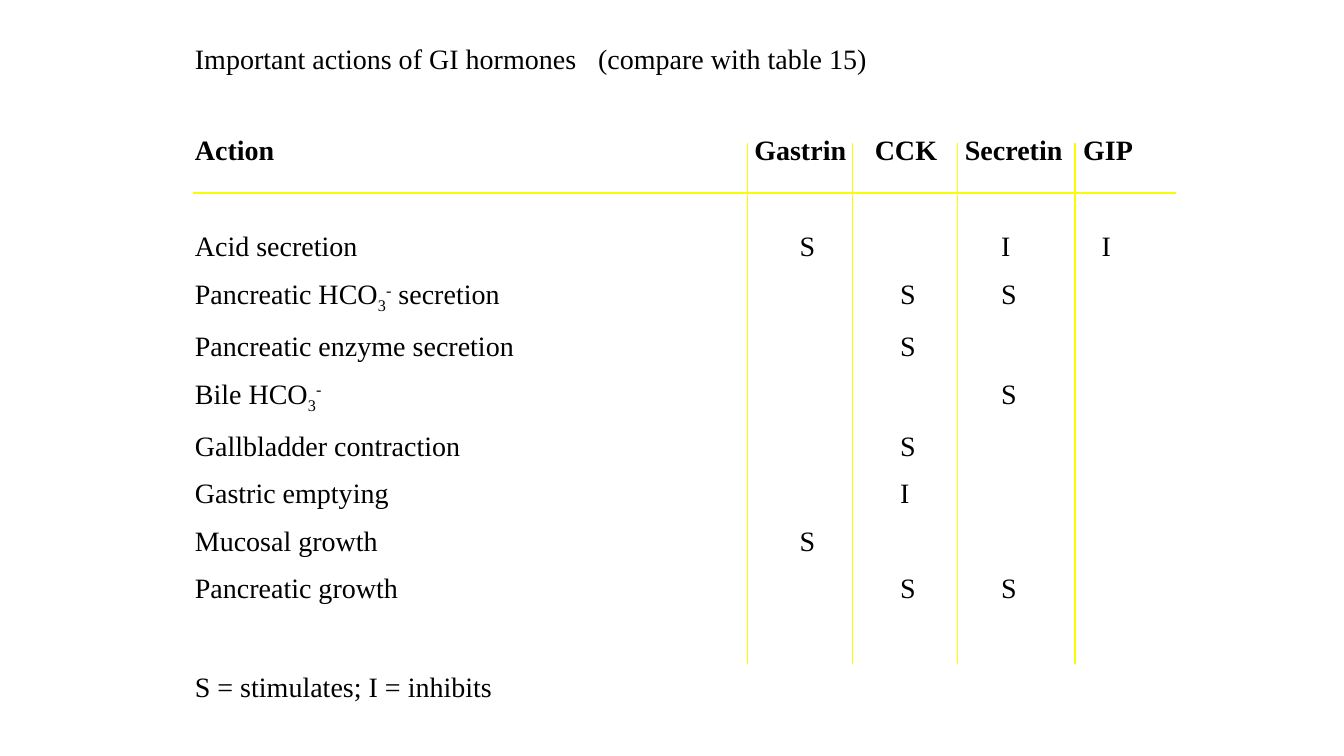
from dataclasses import dataclass

from lxml.etree import SubElement
from pptx import Presentation
from pptx.dml.color import RGBColor
from pptx.enum.shapes import MSO_CONNECTOR
from pptx.enum.text import MSO_ANCHOR, MSO_AUTO_SIZE, PP_ALIGN
from pptx.oxml.ns import qn
from pptx.util import Pt

COLOURS = {"paper": "FFFFFF", "text": "000000", "rule": "FAFD00"}
FONT = "Times New Roman"
TABLE_LEFT, TABLE_TOP = 138, 97
TEXT_INDENT = 1.2
HEADER_HEIGHT = 68.6
ROW_HEIGHT, FORMULA_ROW_HEIGHT = 34, 37.2
RULE_TOP, RULE_BOTTOM, HEADER_RULE_Y = 102, 474, 138
BICARBONATE = (("HCO", 0), ("3", -25), ("-", 30))


@dataclass(frozen=True)
class Column:
    heading: str
    width: float
    heading_indent: float
    mark_indent: float


@dataclass(frozen=True)
class Action:
    label: tuple[tuple[str, int], ...]
    marks: tuple[str, str, str, str]

    @property
    def height(self) -> float:
        return FORMULA_ROW_HEIGHT if len(self.label) > 1 else ROW_HEIGHT


@dataclass(frozen=True)
class Rule:
    start: tuple[float, float]
    end: tuple[float, float]


COLUMNS = (
    Column("Action", 396, TEXT_INDENT, TEXT_INDENT),
    Column("Gastrin", 75, 4.8, 37.2),
    Column("CCK", 75, 15.9, 34.1),
    Column("Secretin", 84, 5.3, 31.2),
    Column("GIP", 72, 5.8, 19),
)
ACTIONS = (
    Action((("Acid secretion", 0),), ("S", "", "I", "I")),
    Action((("Pancreatic ", 0), *BICARBONATE, (" secretion", 0)), ("", "S", "S", "")),
    Action((("Pancreatic enzyme secretion", 0),), ("", "S", "", "")),
    Action((("Bile ", 0), *BICARBONATE), ("", "", "S", "")),
    Action((("Gallbladder contraction", 0),), ("", "S", "", "")),
    Action((("Gastric emptying", 0),), ("", "I", "", "")),
    Action((("Mucosal growth", 0),), ("S", "", "", "")),
    Action((("Pancreatic growth", 0),), ("", "S", "S", "")),
)


def write(paragraph, text: str, *, bold: bool = False, baseline: int = 0) -> None:
    """Append a run; baseline is the raising or lowering in percent."""
    run = paragraph.add_run()
    run.text = text
    run.font.name = FONT
    run.font.size = Pt(20)
    run.font.bold = bold
    run.font.color.rgb = RGBColor.from_string(COLOURS["text"])
    if baseline:
        run._r.get_or_add_rPr().set("baseline", str(baseline * 1000))


def fill_placeholder(shape, text: str, top: float, tab: float | None = None) -> None:
    """Place one plain line of text, with an optional tab stop."""
    shape.left, shape.top = Pt(TABLE_LEFT), Pt(top)
    shape.width, shape.height = Pt(702), Pt(26)
    frame = shape.text_frame
    frame.auto_size = MSO_AUTO_SIZE.NONE
    frame.word_wrap = True
    frame.vertical_anchor = MSO_ANCHOR.TOP
    frame.margin_left = Pt(TEXT_INDENT)
    frame.margin_right = frame.margin_top = frame.margin_bottom = 0
    paragraph = frame.paragraphs[0]
    paragraph.alignment = PP_ALIGN.LEFT
    paragraph.space_before = Pt(0)
    properties = paragraph._p.get_or_add_pPr()
    properties.set("marL", "0")
    properties.set("indent", "0")
    SubElement(properties, qn("a:buNone"))
    if tab is not None:
        stops = SubElement(properties, qn("a:tabLst"))
        SubElement(stops, qn("a:tab"), pos=str(Pt(tab)), algn="l")
    write(paragraph, text)


def fill_cell(cell, runs: tuple[tuple[str, int], ...], indent: float, bold: bool = False) -> None:
    cell.fill.background()
    cell.vertical_anchor = MSO_ANCHOR.TOP
    cell.margin_left = Pt(indent)
    cell.margin_right = cell.margin_top = cell.margin_bottom = 0
    for text, baseline in runs:
        if text:
            write(cell.text_frame.paragraphs[0], text, bold=bold, baseline=baseline)


def add_hormone_table(slide) -> None:
    width = sum(column.width for column in COLUMNS)
    height = HEADER_HEIGHT + sum(action.height for action in ACTIONS)
    table = slide.shapes.add_table(
        len(ACTIONS) + 1, len(COLUMNS),
        Pt(TABLE_LEFT), Pt(TABLE_TOP), Pt(width), Pt(height),
    ).table
    table.first_row = table.horz_banding = False
    table.rows[0].height = Pt(HEADER_HEIGHT)
    for index, column in enumerate(COLUMNS):
        table.columns[index].width = Pt(column.width)
        fill_cell(table.cell(0, index), ((column.heading, 0),), column.heading_indent, bold=True)
    for row, action in enumerate(ACTIONS, start=1):
        table.rows[row].height = Pt(action.height)
        contents = (action.label, *(((mark, 0),) for mark in action.marks))
        for index, (column, runs) in enumerate(zip(COLUMNS, contents)):
            fill_cell(table.cell(row, index), runs, column.mark_indent)


def table_rules() -> list[Rule]:
    """One rule under the headings and one between each pair of columns."""
    right = TABLE_LEFT + sum(column.width for column in COLUMNS)
    rules = [Rule((TABLE_LEFT, HEADER_RULE_Y), (right, HEADER_RULE_Y))]
    x = TABLE_LEFT
    for column in COLUMNS[:-1]:
        x += column.width
        rules.append(Rule((x, RULE_TOP), (x, RULE_BOTTOM)))
    return rules


def draw_rule(slide, rule: Rule) -> None:
    ends = [Pt(length) for length in (*rule.start, *rule.end)]
    connector = slide.shapes.add_connector(MSO_CONNECTOR.STRAIGHT, *ends)
    connector.line.color.rgb = RGBColor.from_string(COLOURS["rule"])
    connector.line.width = Pt(1)
    SubElement(connector._element.spPr, qn("a:effectLst"))


def main() -> None:
    presentation = Presentation()
    presentation.slide_width, presentation.slide_height = Pt(960), Pt(540)
    slide = presentation.slides.add_slide(presentation.slide_layouts[1])
    background = slide.background.fill
    background.solid()
    background.fore_color.rgb = RGBColor.from_string(COLOURS["paper"])
    title = "Important actions of GI hormones\t(compare with table 15)"
    fill_placeholder(slide.shapes.title, title, top=29.3, tab=292.2)
    fill_placeholder(slide.placeholders[1], "S = stimulates; I = inhibits", top=478)
    add_hormone_table(slide)
    for rule in table_rules():
        draw_rule(slide, rule)
    presentation.save("out.pptx")


if __name__ == "__main__":
    main()
